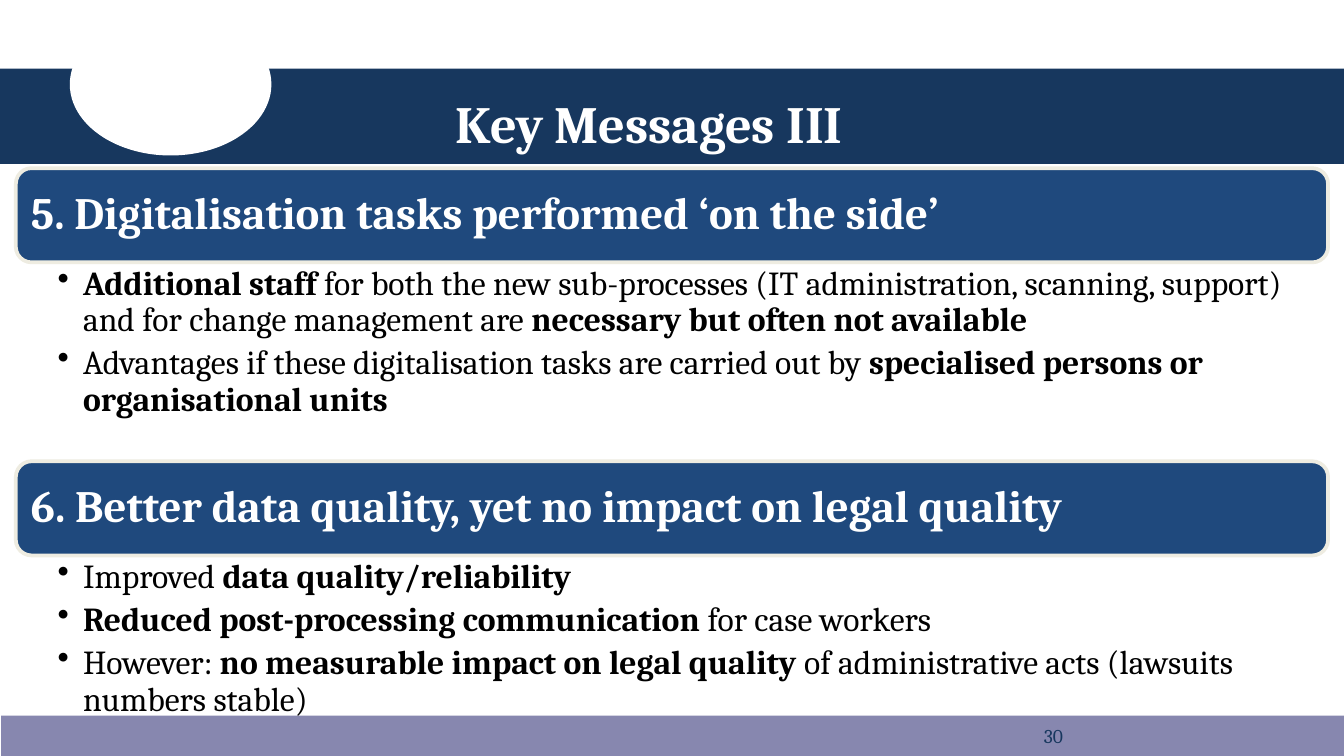
import lxml.etree
import pptx
import pptx.dml.color
import pptx.enum.shapes
import pptx.enum.text
import pptx.oxml.ns
import pptx.util

Cm = pptx.util.Cm
Pt = pptx.util.Pt
RGBColor = pptx.dml.color.RGBColor
Shape = pptx.enum.shapes.MSO_SHAPE
Anchor = pptx.enum.text.MSO_ANCHOR
Align = pptx.enum.text.PP_ALIGN

NAVY = RGBColor(0x17, 0x37, 0x5E)
BLUE = RGBColor(0x1F, 0x49, 0x7D)
LILAC = RGBColor(0x87, 0x87, 0xAF)
CREAM = RGBColor(0xEE, 0xEC, 0xE1)
WHITE = RGBColor(0xFF, 0xFF, 0xFF)
BLACK = RGBColor(0x00, 0x00, 0x00)

FONT = "Cambria"
SLIDE_WIDTH = 25.4
SECTION_LEFT = 0.3
SECTION_WIDTH = 24.8
HEADING_HEIGHT = 1.78

SECTIONS = [
    (3.18, 3.76, "5. Digitalisation tasks performed ‘on the side’", [
        "*Additional staff *for both the new sub-processes (IT administration, "
        "scanning, support) and for change management are* necessary but often not available*",
        "Advantages if these digitalisation tasks are carried out by "
        "*specialised persons or organisational units*",
    ]),
    (8.72, 3.07, "6. Better data quality, yet no impact on legal quality", [
        "Improved *data quality/reliability*",
        "*Reduced post-processing communication *for case workers",
        "However: *no measurable impact on legal quality *of administrative acts "
        "(lawsuits numbers stable)",
    ]),
]


def add_box(slide, kind, left, top, width, height, fill, line=None):
    shape = slide.shapes.add_shape(kind, Cm(left), Cm(top), Cm(width), Cm(height))
    shape.shadow.inherit = False
    shape.fill.solid()
    shape.fill.fore_color.rgb = fill
    if line is None:
        shape.line.fill.background()
    else:
        shape.line.color.rgb = line
        shape.line.width = Pt(2)
    return shape


def add_bullet(paragraph, indent):
    properties = paragraph._p.get_or_add_pPr()
    properties.set("marL", str(Cm(indent)))
    properties.set("indent", str(-Cm(indent)))
    bullet = lxml.etree.SubElement(properties, pptx.oxml.ns.qn("a:buChar"))
    bullet.set("char", "•")


def set_text(shape, texts, size, color, bold=False, bullets=False, anchor=Anchor.TOP,
             margins=(0.25, 0.13, 0.25, 0.13), line_spacing=1.0, space_after=0):
    frame = shape.text_frame
    frame.word_wrap = True
    frame.auto_size = pptx.enum.text.MSO_AUTO_SIZE.NONE
    frame.vertical_anchor = anchor
    frame.margin_left, frame.margin_top, frame.margin_right, frame.margin_bottom = map(Cm, margins)
    for index, text in enumerate(texts):
        paragraph = frame.add_paragraph() if index else frame.paragraphs[0]
        if bullets:
            paragraph.level = 1
            add_bullet(paragraph, 0.48)
        paragraph.alignment = Align.LEFT
        paragraph.line_spacing = line_spacing
        paragraph.space_before = Pt(0)
        paragraph.space_after = Pt(space_after)
        for position, part in enumerate(text.split("*")):
            if part:
                run = paragraph.add_run()
                run.text = part
                run.font.name = FONT
                run.font.size = Pt(size)
                run.font.bold = bold or position % 2 == 1
                run.font.color.rgb = color


def add_text(slide, left, top, width, height, texts, **text_format):
    box = slide.shapes.add_textbox(Cm(left), Cm(top), Cm(width), Cm(height))
    set_text(box, texts, **text_format)


def add_section(slide, top, body_height, heading, messages):
    bar = add_box(slide, Shape.ROUNDED_RECTANGLE, SECTION_LEFT, top,
                  SECTION_WIDTH, HEADING_HEIGHT, BLUE, CREAM)
    set_text(bar, [heading], size=24, color=WHITE, bold=True, anchor=Anchor.MIDDLE,
             margins=(0.2, 0.25, 0.2, 0.25), line_spacing=0.9)
    add_text(slide, SECTION_LEFT, top + HEADING_HEIGHT, SECTION_WIDTH, body_height, messages,
             size=18, color=BLACK, bullets=True, margins=(0.79, 0.08, 0.36, 0.08),
             line_spacing=0.9, space_after=3.6)


def place_title(slide, text):
    title = slide.shapes.title
    title.left, title.top, title.width, title.height = Cm(8.36), Cm(1.6), Cm(17.04), Cm(0.97)
    set_text(title, [text], size=28, color=WHITE, bold=True)
    slide.shapes._spTree.append(title._element)


def main():
    presentation = pptx.Presentation()
    presentation.slide_width = Cm(SLIDE_WIDTH)
    presentation.slide_height = Cm(14.29)
    slide = presentation.slides.add_slide(presentation.slide_layouts[5])
    add_box(slide, Shape.RECTANGLE, 0, 1.3, SLIDE_WIDTH, 1.8, NAVY)
    add_box(slide, Shape.OVAL, 1.32, 0.25, 3.81, 2.69, WHITE)
    add_box(slide, Shape.RECTANGLE, 0.02, 13.53, SLIDE_WIDTH - 0.02, 0.76, LILAC)
    for section in SECTIONS:
        add_section(slide, *section)
    place_title(slide, "Key Messages III")
    add_text(slide, 19.48, 13.53, 5.92, 0.76, ["30"], size=10.5, color=NAVY,
             anchor=Anchor.MIDDLE)
    presentation.save("out.pptx")


if __name__ == "__main__":
    main()
